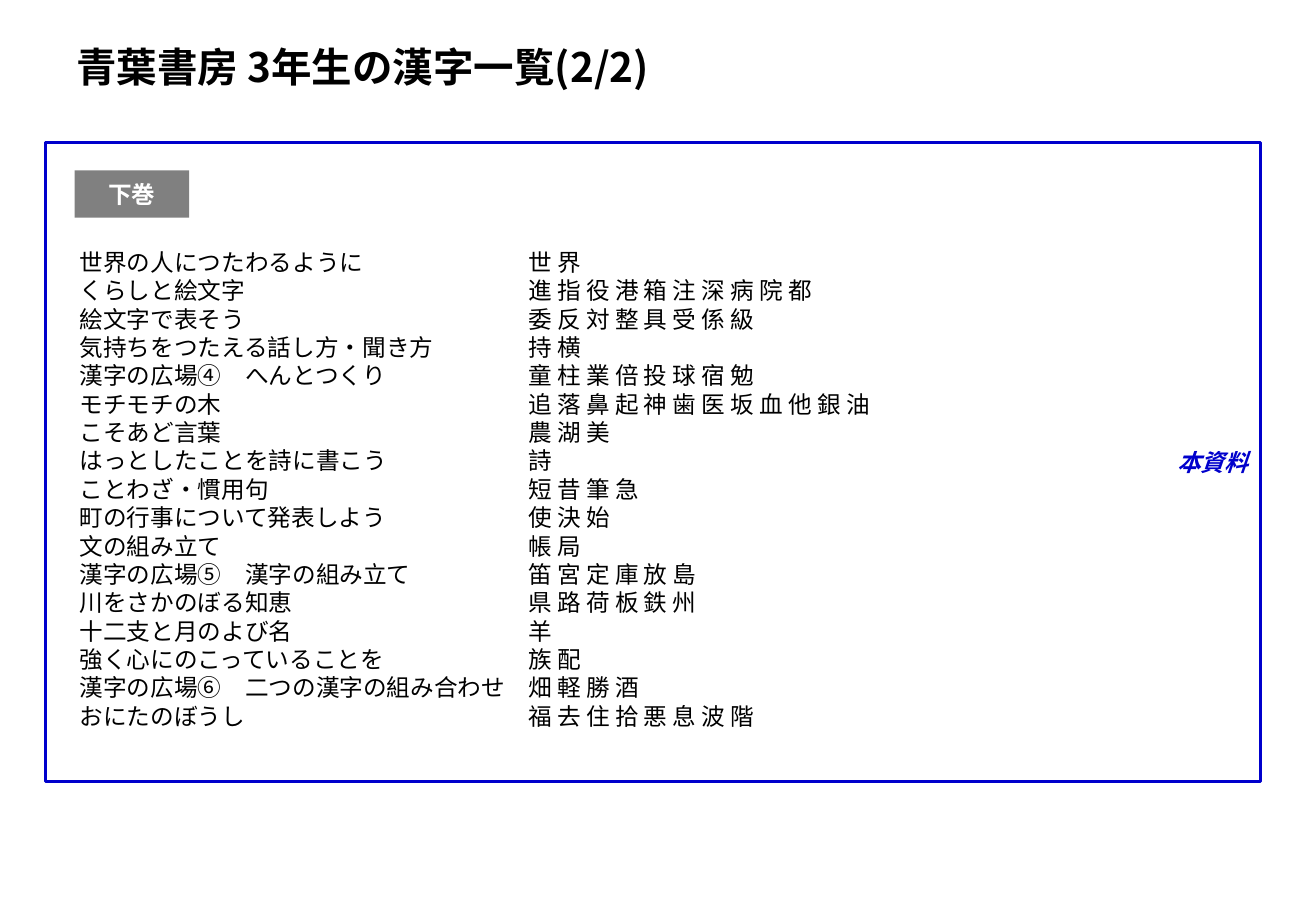
from lxml import etree
from pptx import Presentation
from pptx.dml.color import RGBColor
from pptx.enum.shapes import MSO_SHAPE
from pptx.enum.text import MSO_ANCHOR, PP_ALIGN
from pptx.oxml.ns import qn
from pptx.util import Pt

# Content
TITLE = "青葉書房 3年生の漢字一覧(2/2)"
LABEL = "下巻"
MARK = "本資料"
UNITS = [
    ("世界の人につたわるように", "世界"),
    ("くらしと絵文字", "進指役港箱注深病院都"),
    ("絵文字で表そう", "委反対整具受係級"),
    ("気持ちをつたえる話し方・聞き方", "持横"),
    ("漢字の広場④　へんとつくり", "童柱業倍投球宿勉"),
    ("モチモチの木", "追落鼻起神歯医坂血他銀油"),
    ("こそあど言葉", "農湖美"),
    ("はっとしたことを詩に書こう", "詩"),
    ("ことわざ・慣用句", "短昔筆急"),
    ("町の行事について発表しよう", "使決始"),
    ("文の組み立て", "帳局"),
    ("漢字の広場⑤　漢字の組み立て", "笛宮定庫放島"),
    ("川をさかのぼる知恵", "県路荷板鉄州"),
    ("十二支と月のよび名", "羊"),
    ("強く心にのこっていることを", "族配"),
    ("漢字の広場⑥　二つの漢字の組み合わせ", "畑軽勝酒"),
    ("おにたのぼうし", "福去住拾悪息波階"),
]

# Style
FONT = "Noto Sans CJK JP"
BLACK = RGBColor(0, 0, 0)
WHITE = RGBColor(255, 255, 255)
GRAY = RGBColor(128, 128, 128)
BLUE = RGBColor(0, 0, 0xCC)
RECT = MSO_SHAPE.RECTANGLE
TOP, MIDDLE = MSO_ANCHOR.TOP, MSO_ANCHOR.MIDDLE
CENTER, RIGHT = PP_ALIGN.CENTER, PP_ALIGN.RIGHT
SIZE = 14
LEAD = 1.2  # line pitch per point of type
TAB = 19 * SIZE  # the kanji column starts 19 characters in

prs = Presentation()
prs.slide_width, prs.slide_height = Pt(780), Pt(540)
slide = prs.slides.add_slide(prs.slide_layouts[6])


def add_run(para, text, color, size=SIZE, bold=False, italic=False):
    run = para.add_run()
    run.text = text
    font = run.font
    font.name, font.size = FONT, Pt(size)
    font.bold, font.italic = bold, italic
    font.color.rgb = color
    east = etree.SubElement(run._r.get_or_add_rPr(), qn("a:ea"))
    east.set("typeface", FONT)


def add_box(x, y, w, h, anchor, inset=3.6):
    box = slide.shapes.add_textbox(Pt(x), Pt(y), Pt(w), Pt(h))
    frame = box.text_frame
    frame.word_wrap = True
    frame.vertical_anchor = anchor
    frame.margin_top = Pt(inset)
    return frame


def add_rect(x, y, w, h, align):
    rect = slide.shapes.add_shape(RECT, Pt(x), Pt(y), Pt(w), Pt(h))
    rect.shadow.inherit = False
    rect.text_frame.vertical_anchor = MIDDLE
    para = rect.text_frame.paragraphs[0]
    para.alignment = align
    return rect, para


def set_tab(para, pos):
    tabs = etree.SubElement(para._p.get_or_add_pPr(), qn("a:tabLst"))
    tab = etree.SubElement(tabs, qn("a:tab"))
    tab.set("pos", str(Pt(pos)))
    tab.set("algn", "l")


# Volume label
label, para = add_rect(44.2, 101, 68, 28, CENTER)
label.fill.solid()
label.fill.fore_color.rgb = GRAY
label.line.fill.background()
add_run(para, LABEL, WHITE, bold=True)

# Unit list: name, tab, kanji
frame = add_box(40, 126.5, 688.3, 312.5, TOP, 3.6 + SIZE * LEAD)
for i, (name, kanji) in enumerate(UNITS):
    para = frame.add_paragraph() if i else frame.paragraphs[0]
    para.line_spacing = Pt(SIZE * LEAD)
    set_tab(para, TAB)
    add_run(para, name + "\t" + " ".join(kanji), BLACK)

# Title
para = add_box(38.2, 21.6, 697.7, 36.7, TOP).paragraphs[0]
para.line_spacing = Pt(24 * LEAD)
add_run(para, TITLE, BLACK, 24, bold=True)

# Frame with its mark
border, para = add_rect(27, 84.5, 720, 378.7, RIGHT)
border.fill.background()
border.line.color.rgb = BLUE
border.line.width = Pt(2)
add_run(para, MARK, BLUE, bold=True, italic=True)

prs.save("out.pptx")
